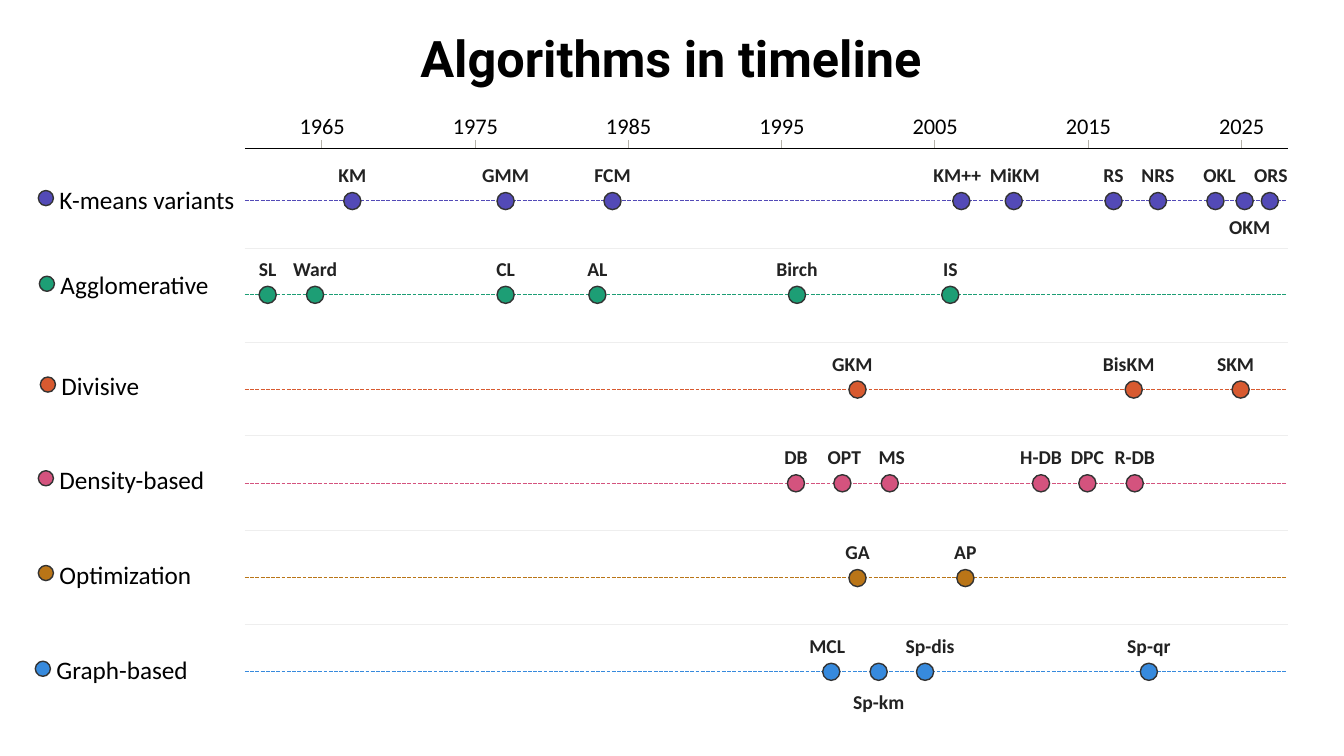
from lxml import etree
from pptx import Presentation
from pptx import util as u
from pptx.dml.color import RGBColor
from pptx.enum import dml, shapes, text
from pptx.oxml import ns

PX = u.Inches(1) // 100
COLORS = {
    "ink": "000000", "label": "222222", "outline": "333333",
    "tick": "B4B2A9", "separator": "EEEEEE",
    "K-means variants": "534AB7", "Agglomerative": "1D9E75",
    "Divisive": "D85A30", "Density-based": "D4537E",
    "Optimization": "BA7517", "Graph-based": "378ADD",
}
AXIS_LEFT, AXIS_RIGHT, AXIS_Y = 243, 1277, 147
FIRST_ROW_Y, LAST_ROW_Y = 199, 666
DOT, LEGEND_DOT = 17, 15

# Legend dot left and top, legend text width,
# then algorithms: name, dot left, label shift, label width
families = {
    "K-means variants": (38, 189, 204, [
        ("KM", 341, 0, 85), ("GMM", 493, 0, 85), ("FCM", 599, 0, 85),
        ("KM++", 945, -4, 85), ("MiKM", 997, 1, 85), ("RS", 1096, 0, 60),
        ("NRS", 1140, 0, 60), ("OKL", 1197, 4, 55), ("OKM", 1226, 5, 85),
        ("ORS", 1251, 1, 54)]),
    "Agglomerative": (39, 274, 173, [
        ("SL", 257, 0, 85), ("Ward", 304, 0, 85), ("CL", 493, 0, 85),
        ("AL", 584, 0, 85), ("Birch", 782, 0, 85), ("IS", 934, 0, 85)]),
    "Divisive": (40, 374, 173, [
        ("GKM", 842, -5, 85), ("BisKM", 1116, -5, 85), ("SKM", 1222, -5, 85)]),
    "Density-based": (38, 467, 173, [
        ("DB", 781, 0, 85), ("OPT", 827, 2, 55), ("MS", 874, 2, 54),
        ("H-DB", 1024, 0, 85), ("DPC", 1070, 0, 85), ("R-DB", 1117, 0, 85)]),
    "Optimization": (38, 561, 173, [("GA", 842, 0, 85), ("AP", 949, 0, 85)]),
    "Graph-based": (35, 656, 173, [
        ("MCL", 816, -4, 85), ("Sp-km", 863, 0, 85), ("Sp-dis", 909, 5, 85),
        ("Sp-qr", 1131, 0, 85)]),
}
LABEL_ABOVE = -37
labels_below = {"OKM": 14, "Sp-km": 19}

presentation = Presentation()
presentation.slide_width = 1333 * PX
presentation.slide_height = 750 * PX
slide = presentation.slides.add_slide(presentation.slide_layouts[6])
timeline = slide.shapes.add_group_shape().shapes


def add_text(content, left, top, width, height, *, size, parent=timeline,
             color="ink", font="Calibri", bold=False, centered=True, inset=0):
    box = parent.add_textbox(*(round(v * PX) for v in (left, top, width, height)))
    frame = box.text_frame
    frame.word_wrap = True
    frame.vertical_anchor = text.MSO_ANCHOR.MIDDLE
    frame.margin_left = frame.margin_right = 2 * inset * PX
    frame.margin_top = frame.margin_bottom = inset * PX
    paragraph = frame.paragraphs[0]
    paragraph.alignment = text.PP_ALIGN.CENTER if centered else text.PP_ALIGN.LEFT
    run = paragraph.add_run()
    run.text = content
    run.font.name, run.font.size, run.font.bold = font, u.Pt(size), bold
    run.font.color.rgb = RGBColor.from_string(COLORS[color])


def add_mark(kind, color, x1, y1, x2, y2, weight, dash=None):
    """Draw a line between two points, or an ellipse in the box they span."""
    if kind == "line":
        mark = timeline.add_connector(
            shapes.MSO_CONNECTOR.STRAIGHT, *(v * PX for v in (x1, y1, x2, y2)))
        stroke = color
    else:
        mark = timeline.add_shape(
            shapes.MSO_SHAPE.OVAL, *(v * PX for v in (x1, y1, x2 - x1, y2 - y1)))
        mark.shadow.inherit = False
        mark.fill.solid()
        mark.fill.fore_color.rgb = RGBColor.from_string(COLORS[color])
        stroke = "outline"
    mark.line.color.rgb = RGBColor.from_string(COLORS[stroke])
    mark.line.width = u.Pt(weight)
    if dash:
        mark.line.dash_style = dash
    if kind == "line":
        etree.SubElement(mark._element.spPr, ns.qn("a:effectLst"))


for decade in range(7):
    x = 319 + 152 * decade
    add_text(str(1965 + 10 * decade), x - 37, 113, 75, 24, size=16)
    add_mark("line", "tick", x, 139, x, AXIS_Y, 0.5)
add_mark("line", "ink", AXIS_LEFT, AXIS_Y, AXIS_RIGHT, AXIS_Y, 0.75)

row_gap = (LAST_ROW_Y - FIRST_ROW_Y) / (len(families) - 1)
for row, (family, (_, _, _, algorithms)) in enumerate(families.items()):
    y = round(FIRST_ROW_Y + row * row_gap)
    add_mark("line", family, AXIS_LEFT, y, AXIS_RIGHT, y, 0.35,
             dml.MSO_LINE.LONG_DASH)
    if row < len(families) - 1:
        separator_y = round(FIRST_ROW_Y + (row + 0.5) * row_gap)
        add_mark("line", "separator", AXIS_LEFT, separator_y,
                 AXIS_RIGHT, separator_y, 0.25)
    for name, left, shift, width in algorithms:
        top = y - DOT // 2
        add_mark("dot", family, left, top, left + DOT, top + DOT, 1)
        add_text(name, left + DOT / 2 + shift - width / 2,
                 y + labels_below.get(name, LABEL_ABOVE), width, 23,
                 size=14, color="label", bold=True)

for family, (left, top, width, _) in families.items():
    add_mark("dot", family, left, top, left + LEGEND_DOT, top + LEGEND_DOT, 1)
    add_text(family, left + 21, top - 2, width, 21, size=18, centered=False)

add_text("Algorithms in timeline", 148, 21, 1035, 71, size=36,
         parent=slide.shapes, font="Roboto", bold=True, inset=5)

presentation.save("out.pptx")
